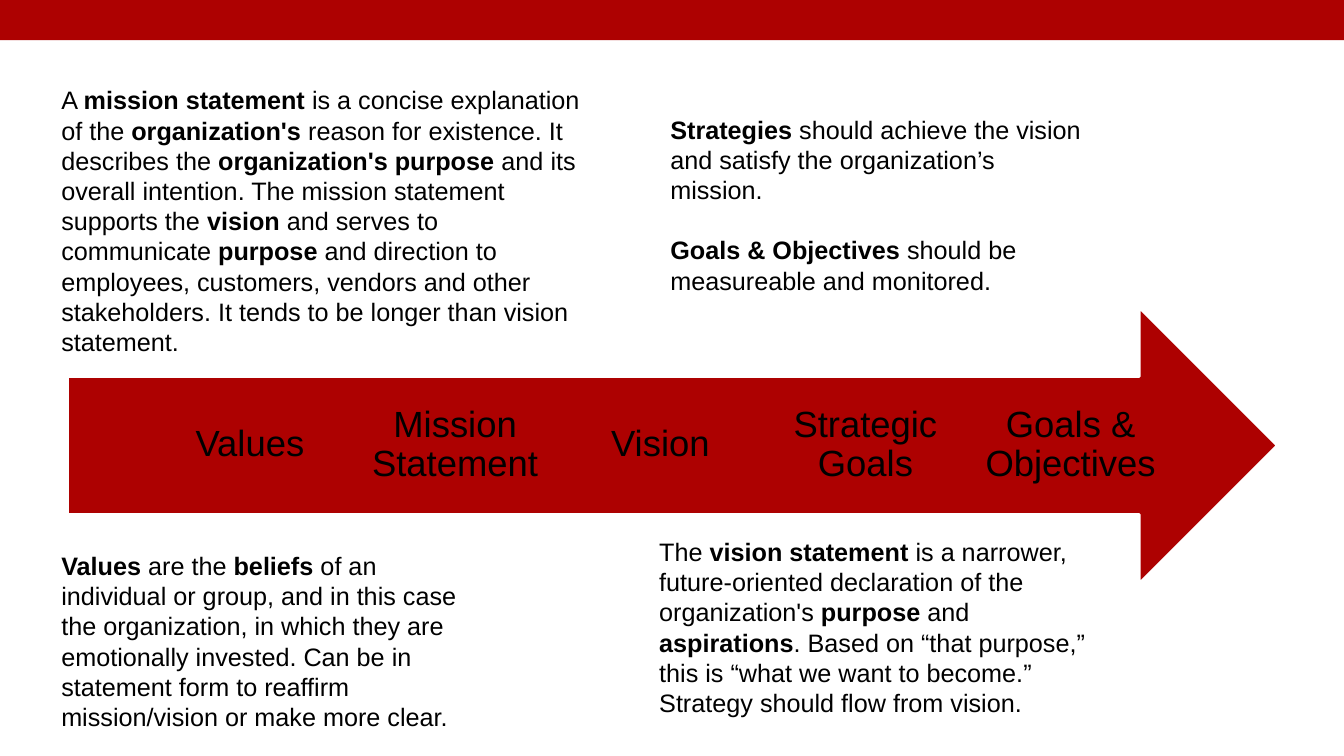
from pptx import Presentation
from pptx.dml.color import RGBColor
from pptx.enum.shapes import MSO_SHAPE
from pptx.enum.text import MSO_ANCHOR, MSO_AUTO_SIZE, PP_ALIGN
from pptx.util import Inches, Pt

COLORS = {"red": "AD0101", "white": "FFFFFF", "black": "000000"}
FONT = "Arial"
STAGES = ["Values", "Mission Statement", "Vision", "Strategic Goals", "Goals & Objectives"]
STAGE_LEFT, STAGE_STEP = 1.63, 2.035

EXPLANATIONS = [
    ((6.44, 5.27, 4.5, 1.92), [
        "The *vision statement *is a narrower, future-oriented declaration of the "
        "organization's *purpose* and *aspirations*. Based on “that purpose,” this is "
        "“what we want to become.” Strategy should flow from vision."]),
    ((0.51, 0.79, 5.46, 2.83), [
        "A *mission statement *is a concise explanation of the *organization's* reason for "
        "existence. It describes the *organization's purpose* and its overall intention. "
        "The mission statement supports the *vision* and serves to communicate *purpose* and "
        "direction to employees, customers, vendors and other stakeholders. It tends to be "
        "longer than vision statement."]),
    ((0.51, 5.41, 4.16, 1.92), [
        "*Values *are the *beliefs* of an individual or group, and in this case the "
        "organization, in which they are emotionally invested. Can be in statement form to "
        "reaffirm mission/vision or make more clear."]),
    ((6.55, 1.08, 4.29, 1.92), [
        "*Strategies* should achieve the vision and satisfy the organization’s mission.",
        "*Goals & Objectives* should be measureable and monitored."]),
]


def color(name):
    """Return the named palette colour."""
    return RGBColor.from_string(COLORS[name])


def add_red_shape(shapes, kind, box):
    """Add a flat red preset shape without an outline."""
    shape = shapes.add_shape(kind, *map(Inches, box))
    shape.shadow.inherit = False
    shape.fill.solid()
    shape.fill.fore_color.rgb = color("red")
    shape.line.fill.background()
    return shape


def add_text_frame(shapes, box):
    """Add a wrapping text box and return its text frame."""
    frame = shapes.add_textbox(*map(Inches, box)).text_frame
    frame.word_wrap = True
    return frame


def add_run(paragraph, text, size, bold=False):
    """Add one black run to a paragraph."""
    run = paragraph.add_run()
    run.text = text
    run.font.name = FONT
    run.font.size = Pt(size)
    run.font.bold = bold
    run.font.color.rgb = color("black")


def add_stage(shapes, index, label):
    """Add the centred label of one stage on the arrow."""
    frame = add_text_frame(shapes, (STAGE_LEFT + index * STAGE_STEP, 3.73, 1.7, 1.37))
    frame.vertical_anchor = MSO_ANCHOR.MIDDLE
    frame.margin_left = frame.margin_right = 0
    frame.margin_top = frame.margin_bottom = Inches(0.29)
    paragraph = frame.paragraphs[0]
    paragraph.alignment = PP_ALIGN.CENTER
    paragraph.line_spacing = 0.9
    add_run(paragraph, label, 26)


def add_explanation(shapes, box, texts):
    """Add paragraphs in which asterisks enclose the bold words."""
    frame = add_text_frame(shapes, box)
    frame.auto_size = MSO_AUTO_SIZE.SHAPE_TO_FIT_TEXT
    for number, text in enumerate(texts):
        paragraph = frame.add_paragraph() if number else frame.paragraphs[0]
        if number:
            paragraph.space_before = Pt(21.6)
        for position, part in enumerate(text.split("*")):
            if part:
                add_run(paragraph, part, 18, bold=position % 2 == 1)


def main():
    """Build and save the slide."""
    presentation = Presentation()
    presentation.slide_width = Inches(13.33)
    presentation.slide_height = Inches(7.5)
    slide = presentation.slides.add_slide(presentation.slide_layouts[6])

    add_red_shape(slide.shapes, MSO_SHAPE.RECTANGLE, (0, 0, 13.33, 0.4))
    process = slide.shapes.add_group_shape()
    arrow = add_red_shape(process.shapes, MSO_SHAPE.RIGHT_ARROW, (0.67, 3.05, 12, 2.74))
    arrow.line.color.rgb = color("white")
    arrow.line.width = Pt(2.08)
    for index, label in enumerate(STAGES):
        add_stage(process.shapes, index, label)
    for box, texts in EXPLANATIONS:
        add_explanation(slide.shapes, box, texts)

    presentation.save("out.pptx")


if __name__ == "__main__":
    main()
